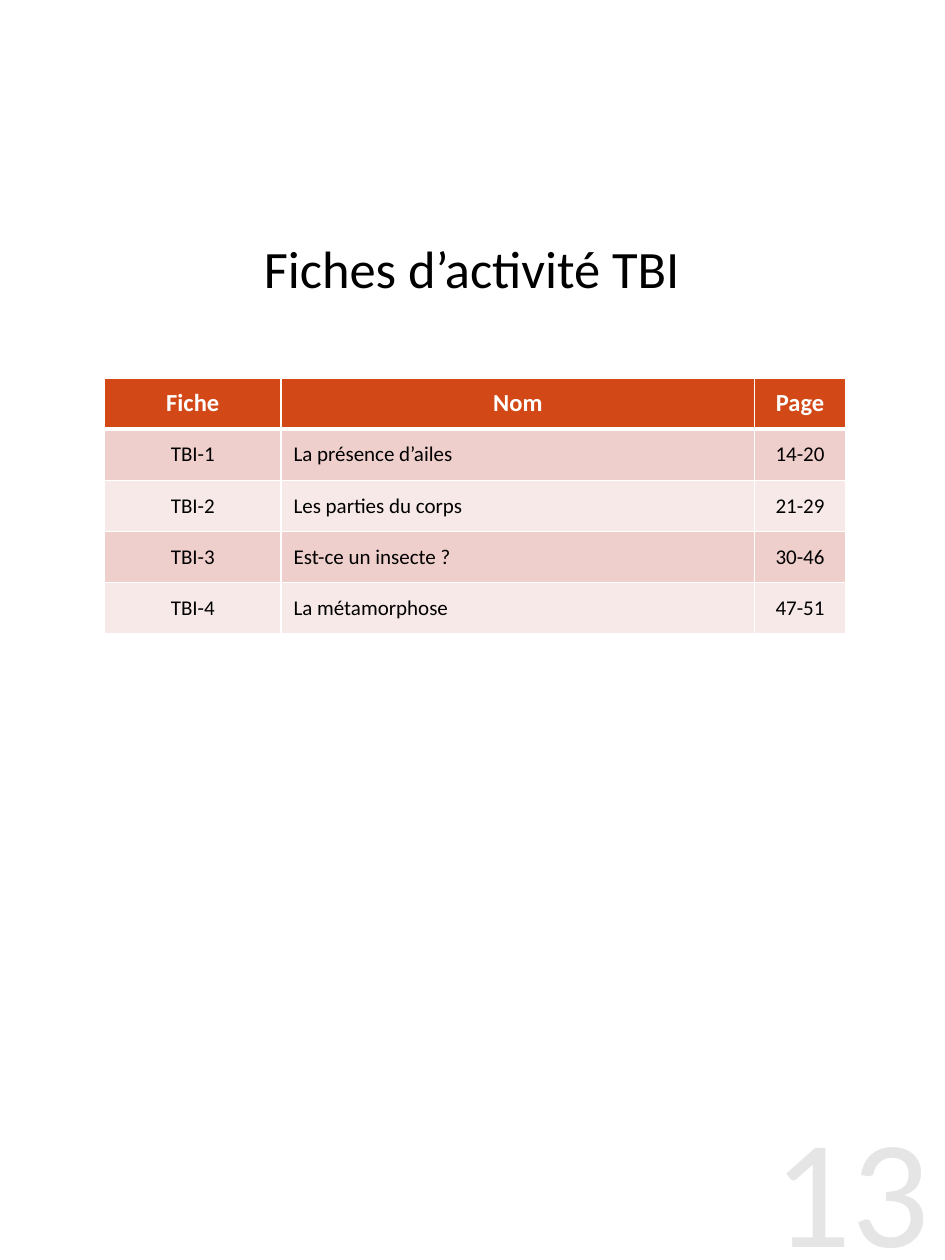
from lxml import etree
from pptx import Presentation
from pptx.dml.color import RGBColor
from pptx.enum import text
from pptx.oxml.ns import qn
from pptx.util import Inches, Pt

FONT = "Calibri"
WHITE, BLACK, ORANGE, GREY = "FFFFFF", "000000", "D34817", "E5E5E5"
BANDS = ["EFCFCC", "F7E9E8"]
COLUMN_WIDTHS = [1.4, 3.76, 0.72]
ROWS = [
    ["Fiche", "Nom", "Page"],
    ["TBI-1", "La présence d’ailes", "14-20"],
    ["TBI-2", "Les parties du corps", "21-29"],
    ["TBI-3", "Est-ce un insecte ?", "30-46"],
    ["TBI-4", "La métamorphose", "47-51"],
]
CENTER, LEFT, RIGHT = (
    text.PP_ALIGN.CENTER, text.PP_ALIGN.LEFT, text.PP_ALIGN.RIGHT)


def color(hex_value):
    return RGBColor.from_string(hex_value)


def write(frame, words, size, hex_value, alignment, bold=False):
    frame.text = words
    paragraph = frame.paragraphs[0]
    paragraph.alignment = alignment
    font = paragraph.font
    font.name, font.size, font.bold = FONT, Pt(size), bold
    font.color.rgb = color(hex_value)


def add_text(slide, box, words, size, hex_value, alignment, anchor):
    frame = slide.shapes.add_textbox(*map(Inches, box)).text_frame
    frame.word_wrap = True
    frame.vertical_anchor = anchor
    frame.margin_left = frame.margin_right = 0
    frame.margin_top = frame.margin_bottom = 0
    write(frame, words, size, hex_value, alignment)


def set_borders(cell, widths):
    """Draw white borders; widths maps each side (L, R, T, B) to points."""
    properties = cell._tc.get_or_add_tcPr()
    for index, (side, width) in enumerate(widths.items()):
        line = etree.Element(qn(f"a:ln{side}"), w=str(Pt(width)))
        fill = etree.SubElement(line, qn("a:solidFill"))
        etree.SubElement(fill, qn("a:srgbClr"), val=WHITE)
        properties.insert(index, line)


def add_activity_table(slide, box):
    table = slide.shapes.add_table(
        len(ROWS), len(COLUMN_WIDTHS), *map(Inches, box)).table
    for column, width in zip(table.columns, COLUMN_WIDTHS):
        column.width = Inches(width)
    for row_index, row in enumerate(ROWS):
        header = row_index == 0
        for column_index, words in enumerate(row):
            cell = table.cell(row_index, column_index)
            cell.vertical_anchor = text.MSO_ANCHOR.MIDDLE
            cell.fill.solid()
            cell.fill.fore_color.rgb = color(
                ORANGE if header else BANDS[(row_index - 1) % 2])
            set_borders(cell, {"L": 1, "R": 1,
                               "T": 3 if row_index == 1 else 1,
                               "B": 3 if header else 1})
            centered = header or column_index != 1
            write(cell.text_frame, words, 14 if header else 12,
                  WHITE if header else BLACK,
                  CENTER if centered else LEFT, bold=header)


def main():
    presentation = Presentation()
    presentation.slide_width = Inches(7.5)
    presentation.slide_height = Inches(10)
    slide = presentation.slides.add_slide(presentation.slide_layouts[6])
    add_text(slide, (5.38, 8.68, 2, 1.32), "13", 88, GREY, RIGHT,
             text.MSO_ANCHOR.TOP)
    add_text(slide, (1.41, 1.65, 4.67, 0.95), "Fiches d’activité TBI", 30,
             BLACK, CENTER, text.MSO_ANCHOR.MIDDLE)
    add_activity_table(slide, (0.83, 3, 5.88, 2.03))
    presentation.save("out.pptx")


if __name__ == "__main__":
    main()
